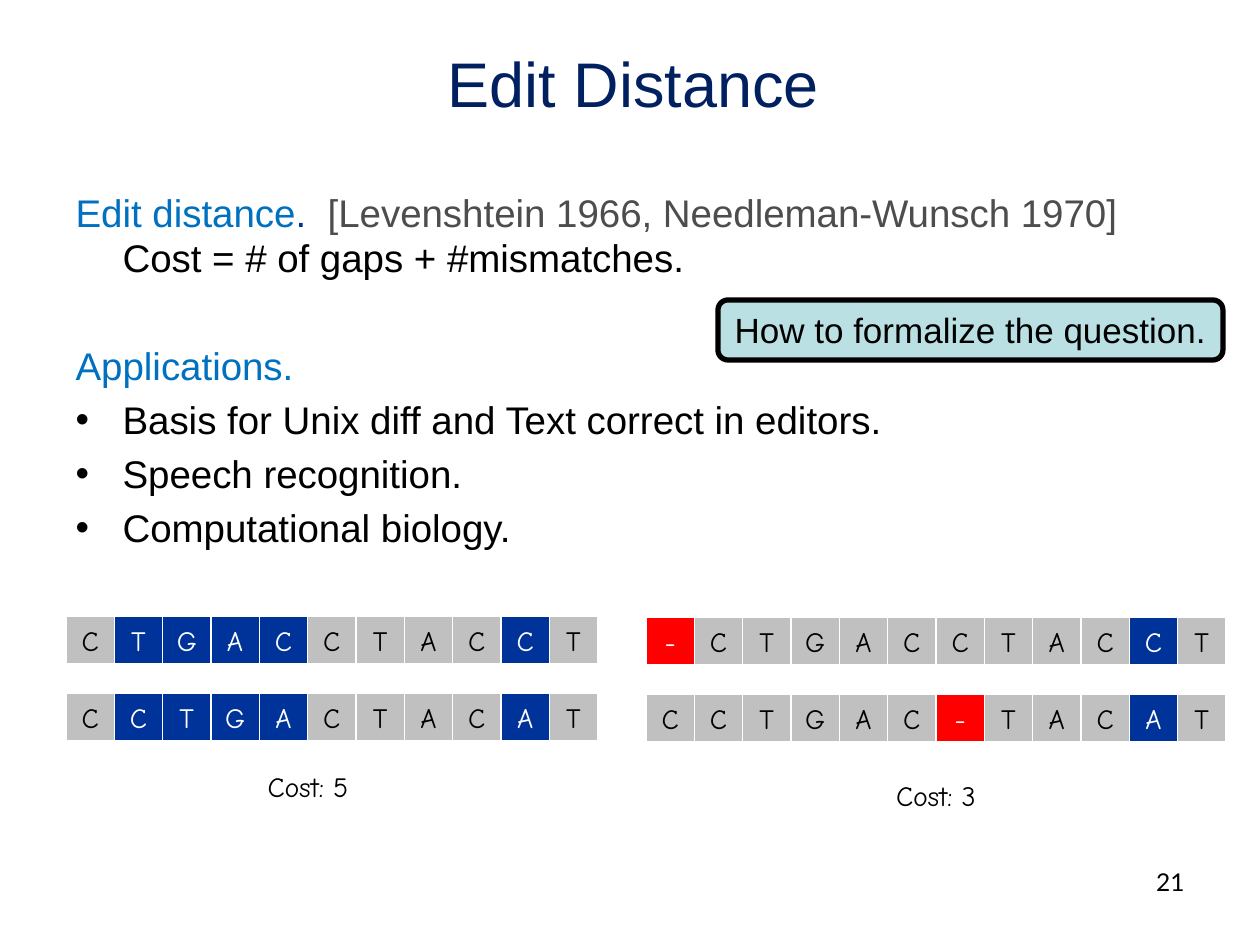
from dataclasses import dataclass

from lxml.etree import SubElement
from pptx import Presentation
from pptx.dml.color import RGBColor
from pptx.enum.shapes import MSO_SHAPE
from pptx.enum.text import MSO_ANCHOR, MSO_AUTO_SIZE, PP_ALIGN
from pptx.oxml.ns import qn
from pptx.util import Emu, Inches, Pt

PX_PER_INCH = 126
CELL_PITCH = 145 / 3  # three cells span 145 px
CELL_SIZE = 48
ROW_PITCH = 77
TEXT_INDENT = 47


@dataclass(frozen=True)
class Theme:
    navy: str = "002060"
    heading: str = "0070C0"
    citation: str = "4D4D4D"
    ink: str = "000000"
    paper: str = "FFFFFF"
    match: str = "C0C0C0"
    mismatch: str = "003399"
    gap: str = "FF0000"
    callout: str = "BBE0E3"
    text_font: str = "Arial"
    cell_font: str = "Comic Neue"
    number_font: str = "Lato"
    title_size: int = 36
    body_size: int = 22
    callout_size: int = 20
    cell_size: int = 16
    number_size: int = 14


THEME = Theme()
EXACT_LINE = {"line_spacing": Pt(26)}
LIST_GAP = {"space_before": Pt(4.4)}
SECTION_GAP = {"space_before": Pt(35.5)}


def px(length):
    return Emu(round(length * Inches(1) / PX_PER_INCH))


def apply(target, formats):
    for attribute, value in formats.items():
        setattr(target, attribute, value)


def place(shape, left, top, width, height):
    apply(shape, {"left": px(left), "top": px(top),
                  "width": px(width), "height": px(height)})


def add_run(paragraph, text, size, color, font=THEME.text_font):
    run = paragraph.add_run()
    run.text = text
    apply(run.font, {"name": font, "size": Pt(size)})
    run.font.color.rgb = RGBColor.from_string(color)


def set_bullet(paragraph, bullet, left, hanging):
    properties = paragraph._p.get_or_add_pPr()
    properties.set("marL", str(px(left)))
    properties.set("indent", str(-px(hanging)))
    if bullet:
        SubElement(properties, qn("a:buFont"), typeface=THEME.text_font)
        SubElement(properties, qn("a:buChar"), char=bullet)
    else:
        SubElement(properties, qn("a:buNone"))


def fill_title(title, text):
    place(title, 35, 38, 1197, 157)
    frame = title.text_frame
    apply(frame, {"vertical_anchor": MSO_ANCHOR.TOP, "margin_top": px(7),
                  "auto_size": MSO_AUTO_SIZE.NONE})
    paragraph = frame.paragraphs[0]
    paragraph.alignment = PP_ALIGN.CENTER
    add_run(paragraph, text, THEME.title_size, THEME.navy)


def fill_body(body, lines):
    """Each line is (runs, level, bullet, left indent, hanging indent, formats)."""
    place(body, 63, 183, 1134, 662)
    frame = body.text_frame
    frame.auto_size = MSO_AUTO_SIZE.NONE
    for index, (runs, level, bullet, left, hanging, formats) in enumerate(lines):
        paragraph = frame.add_paragraph() if index else frame.paragraphs[0]
        set_bullet(paragraph, bullet, left, hanging)
        apply(paragraph, {"level": level, "space_before": Pt(0), **formats})
        for text, color in runs:
            add_run(paragraph, text, THEME.body_size, color)


def add_box(slide, bounds, text, fill=None, color=THEME.ink, line=THEME.paper,
            line_width=0.75, size=THEME.cell_size, font=THEME.cell_font,
            preset=MSO_SHAPE.RECTANGLE, wrap=True):
    box = slide.shapes.add_shape(preset, *map(px, bounds))
    box.shadow.inherit = False
    if fill:
        box.fill.solid()
        box.fill.fore_color.rgb = RGBColor.from_string(fill)
    else:
        box.fill.background()
    box.line.color.rgb = RGBColor.from_string(line)
    box.line.width = Pt(line_width)
    apply(box.text_frame, {"word_wrap": wrap, "vertical_anchor": MSO_ANCHOR.MIDDLE})
    paragraph = box.text_frame.paragraphs[0]
    paragraph.alignment = PP_ALIGN.CENTER
    add_run(paragraph, text, size, color, font)


def cell_colors(letter, partner):
    """Fill and text colour of a letter aligned with its partner."""
    if letter == "-":
        return THEME.gap, THEME.paper
    if partner in (letter, "-"):
        return THEME.match, THEME.ink
    return THEME.mismatch, THEME.paper


def add_alignment(slide, left, top, first, second, cost_bounds):
    for row, (sequence, other) in enumerate([(first, second), (second, first)]):
        for column, (letter, partner) in enumerate(zip(sequence, other)):
            bounds = (left + column * CELL_PITCH, top + row * ROW_PITCH,
                      CELL_PITCH, CELL_SIZE)
            add_box(slide, bounds, letter, *cell_colors(letter, partner))
    cost = sum(a != b for a, b in zip(first, second))
    add_box(slide, cost_bounds, f"Cost: {cost}")


def add_page_number(slide, number):
    page_number = slide.shapes.add_textbox(*map(px, (903, 861, 294, 66)))
    page_number.text_frame.word_wrap = True
    paragraph = page_number.text_frame.paragraphs[0]
    paragraph.alignment = PP_ALIGN.RIGHT
    add_run(paragraph, number, THEME.number_size, THEME.ink, THEME.number_font)


def main():
    presentation = Presentation()
    apply(presentation, {"slide_width": Inches(10), "slide_height": Inches(7.5)})
    slide = presentation.slides.add_slide(presentation.slide_layouts[1])

    definition = [("Edit distance", THEME.heading), (".  ", THEME.mismatch),
                  ("[Levenshtein 1966, Needleman-Wunsch 1970]", THEME.citation)]
    cost_rule = [("Cost = # of gaps + #mismatches.", THEME.ink)]
    applications = ["Basis for Unix diff and Text correct in editors.",
                    "Speech recognition.", "Computational biology."]

    fill_title(slide.shapes.title, "Edit Distance")
    fill_body(slide.placeholders[1], [
        (definition, 0, None, 0, 0, EXACT_LINE),
        (cost_rule, 1, None, TEXT_INDENT, 0, EXACT_LINE),
        ([("Applications.", THEME.heading)], 0, None, 0, 0, SECTION_GAP),
        *(([(application, THEME.ink)], 0, "•", TEXT_INDENT, TEXT_INDENT, LIST_GAP)
          for application in applications),
    ])
    add_page_number(slide, "21")
    add_alignment(slide, 66, 616, "CTGACCTACCT", "CCTGACTACAT", (18, 762, 580, 48))
    add_alignment(slide, 646, 617, "-CTGACCTACCT", "CCTGAC-TACAT", (646, 772, 580, 47))
    add_box(slide, (718, 300, 505, 60), "How to formalize the question.",
            fill=THEME.callout, line=THEME.ink, line_width=3,
            size=THEME.callout_size, font=THEME.text_font,
            preset=MSO_SHAPE.ROUNDED_RECTANGLE, wrap=False)
    presentation.save("out.pptx")


if __name__ == "__main__":
    main()
